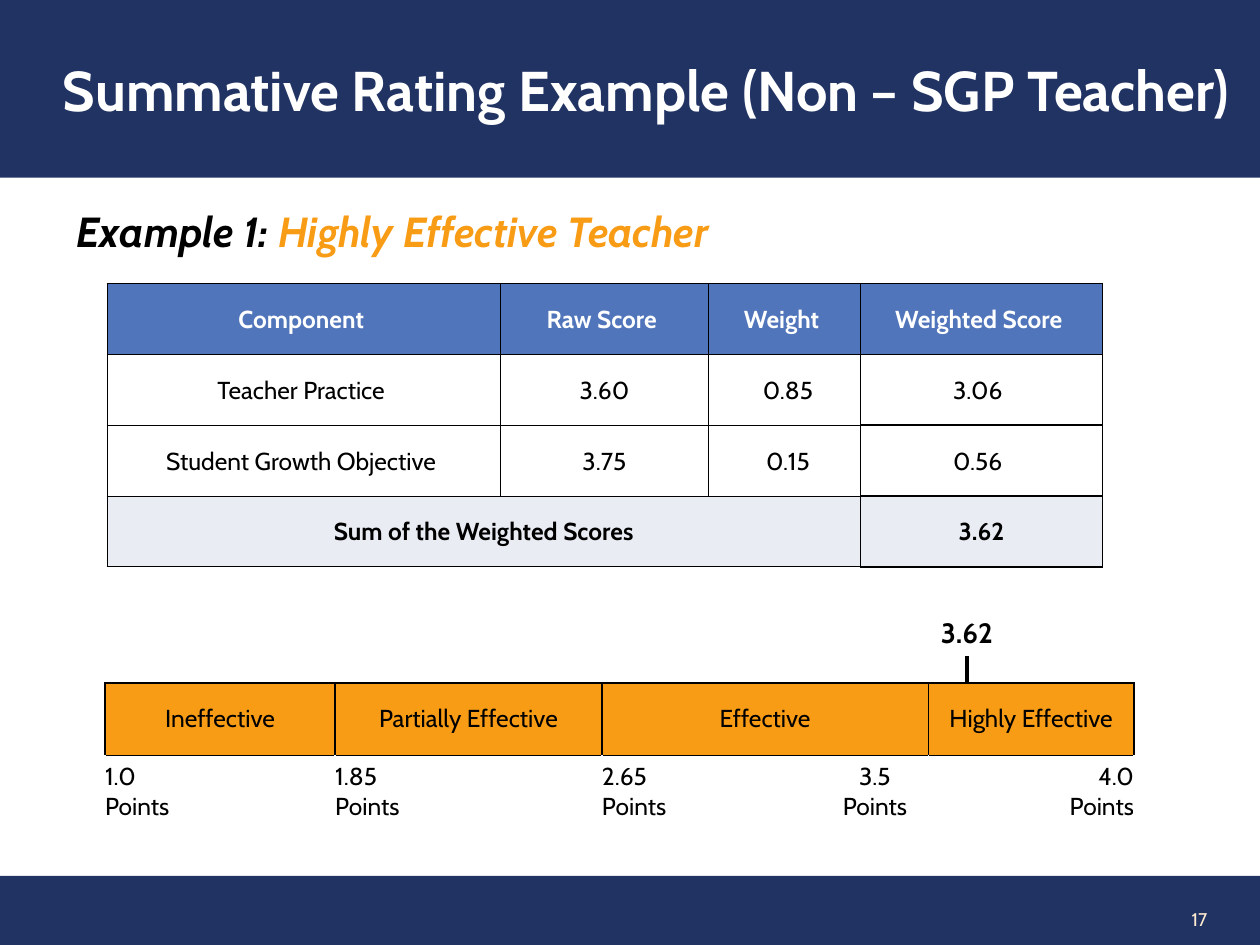
from lxml.etree import SubElement
from pptx import Presentation
from pptx.dml.color import RGBColor
from pptx.enum.shapes import MSO_CONNECTOR, MSO_SHAPE
from pptx.enum.text import MSO_ANCHOR, PP_ALIGN
from pptx.oxml.ns import qn
from pptx.util import Pt

FONT = "Cabin"
NAVY, BLUE, PALE = "213363", "5075BB", "E9ECF3"
ORANGE, CREAM, BLACK, WHITE = "F89C15", "FEEBD0", "000000", "FFFFFF"
LEFT, CENTER, RIGHT = PP_ALIGN.LEFT, PP_ALIGN.CENTER, PP_ALIGN.RIGHT


def rgb(color):
    return RGBColor.from_string(color)


def set_font(font, size, color, bold=False, italic=False):
    font.name, font.size = FONT, Pt(size)
    font.bold, font.italic = bold, italic
    font.color.rgb = rgb(color)


def set_margins(target, margins):
    (target.margin_left, target.margin_top,
     target.margin_right, target.margin_bottom) = map(Pt, margins)


def add_bar(slide, left, top, width, height):
    bar = slide.shapes.add_shape(
        MSO_SHAPE.RECTANGLE, Pt(left), Pt(top), Pt(width), Pt(height))
    bar.shadow.inherit = False
    bar.fill.solid()
    bar.fill.fore_color.rgb = rgb(NAVY)
    bar.line.fill.background()
    return bar


def add_text(slide, box, pieces, size, align=LEFT, wrap=True,
             anchor=MSO_ANCHOR.TOP, bold=False, italic=False):
    """Add one line of text made of (wording, color) pieces."""
    text_box = slide.shapes.add_textbox(*map(Pt, box))
    frame = text_box.text_frame
    frame.word_wrap, frame.vertical_anchor = wrap, anchor
    paragraph = frame.paragraphs[0]
    paragraph.alignment = align
    for wording, color in pieces:
        run = paragraph.add_run()
        run.text = wording
        set_font(run.font, size, color, bold, italic)
    return text_box


def set_borders(cell, left, right, top, bottom):
    """Each side is a (color, width) pair."""
    properties = cell._tc.get_or_add_tcPr()
    sides = {"L": left, "R": right, "T": top, "B": bottom}
    for side, (color, width) in sides.items():
        line = SubElement(properties, qn(f"a:ln{side}"), w=str(Pt(width)))
        fill = SubElement(line, qn("a:solidFill"))
        SubElement(fill, qn("a:srgbClr"), val=color)


def set_fill(cell, color=None, opacity=100):
    if color is None:
        cell.fill.background()
        return
    cell.fill.solid()
    cell.fill.fore_color.rgb = rgb(color)
    if opacity < 100:
        color_element = cell._tc.tcPr.find(".//" + qn("a:srgbClr"))
        SubElement(color_element, qn("a:alpha"), val=str(opacity * 1000))


def add_tab_stop(paragraph, position):
    tabs = SubElement(paragraph._p.get_or_add_pPr(), qn("a:tabLst"))
    SubElement(tabs, qn("a:tab"), pos=str(Pt(position)), algn="ctr")


def set_cell_text(cell, text, margins, align=CENTER, anchor=MSO_ANCHOR.MIDDLE,
                  color=BLACK, bold=False, tab=None):
    cell.text = text
    cell.vertical_anchor = anchor
    set_margins(cell, margins)
    for paragraph in cell.text_frame.paragraphs:
        paragraph.alignment = align
        if tab:
            add_tab_stop(paragraph, tab)
        set_font(paragraph.font, 14, color, bold)


def add_grid(slide, left, top, widths, heights):
    table = slide.shapes.add_table(
        len(heights), len(widths), Pt(left), Pt(top),
        Pt(sum(widths)), Pt(sum(heights))).table
    table.first_row = table.horz_banding = False
    for column, width in zip(table.columns, widths):
        column.width = Pt(width)
    for row, height in zip(table.rows, heights):
        row.height = Pt(height)
    return table


def add_score_table(slide):
    rows = [
        ("Component ", "Raw Score ", "Weight ", "Weighted Score "),
        ("Teacher Practice ", "3.60", "0.85", "3.06"),
        ("Student Growth Objective ", "3.75", "0.15", "0.56"),
        ("Sum of the Weighted Scores", "", "", "3.62"),
    ]
    fills = [BLUE, WHITE, WHITE, PALE]
    table = add_grid(slide, 61.2, 162, [225, 118.5, 87, 138.5], [40.5] * 4)
    table.cell(3, 0).merge(table.cell(3, 2))
    thin, thick = (BLACK, 0.5), (BLACK, 1)
    for row, texts in enumerate(rows):
        is_body = row in (1, 2)
        for column, text in enumerate(texts):
            cell = table.cell(row, column)
            edge = thick if column == 3 else thin
            set_borders(cell, thin, edge, edge, edge)
            set_fill(cell, None if is_body and column == 0 else fills[row])
            if cell.is_spanned:
                continue
            margins = (5 if is_body and column == 2 else 0.7, 0.7,
                       5 if is_body and column == 3 else 0.7, 0)
            set_cell_text(cell, text, margins, bold=not is_body,
                          color=WHITE if row == 0 else BLACK)


def add_rating_scale(slide):
    # Rating, fill opacity, points below, alignment of the points
    ratings = [
        ("Ineffective", 34, "1.0\nPoints", LEFT),
        ("Partially Effective", 56, "1.85\nPoints", LEFT),
        ("Effective", 75, "2.65\t3.5\nPoints\tPoints", LEFT),
        ("Highly Effective", 100, "4.0\nPoints", RIGHT),
    ]
    table = add_grid(slide, 60, 390.2, [131.5, 152.5, 186.5, 117.5], [41.5, 48])
    black, white = (BLACK, 1), (WHITE, 1)
    for column, (rating, opacity, points, align) in enumerate(ratings):
        band, label = table.cell(0, column), table.cell(1, column)
        set_borders(band, black, black, black, black)
        set_fill(band, ORANGE, opacity)
        set_cell_text(band, rating, (7.2, 3.6, 7.2, 3.6))
        set_borders(label, white, white, black, white)
        set_fill(label)
        set_cell_text(label, points, (0, 3.6, 0, 0), align, MSO_ANCHOR.TOP,
                      tab=156 if "\t" in points else None)


def add_score_marker(slide):
    score = add_text(slide, (517, 348, 71, 27), [("3.62", BLACK)], 16,
                     align=CENTER, bold=True)
    marker = slide.shapes.add_connector(
        MSO_CONNECTOR.STRAIGHT, Pt(552.5), Pt(375), Pt(552.5), Pt(389.5))
    marker.begin_connect(score, 2)
    marker.line.color.rgb = rgb(BLACK)
    marker.line.width = Pt(2)
    SubElement(marker._element.spPr, qn("a:effectLst"))


def add_title(slide, text):
    title = add_bar(slide, 0, 0, 720, 101.5)
    frame = title.text_frame
    frame.word_wrap, frame.vertical_anchor = True, MSO_ANCHOR.MIDDLE
    set_margins(frame, (36, 3.6, 7.2, 3.6))
    frame.text = text
    paragraph = frame.paragraphs[0]
    paragraph.alignment = LEFT
    set_font(paragraph.font, 32, WHITE, bold=True)


def main():
    presentation = Presentation()
    presentation.slide_width, presentation.slide_height = Pt(720), Pt(540)
    slide = presentation.slides.add_slide(presentation.slide_layouts[6])

    # Footer and title
    add_bar(slide, 0, 500.5, 721.5, 42.5)
    add_text(slide, (592, 510.5, 105, 29), [("17", CREAM)], 10.5,
             align=RIGHT, anchor=MSO_ANCHOR.MIDDLE)
    add_title(slide, "Summative Rating Example (Non – SGP Teacher)")

    # Rating scale with the teacher's score
    add_rating_scale(slide)
    add_score_marker(slide)

    # Example heading and scores
    add_text(slide, (36.7, 113.8, 384, 36),
             [("Example 1: ", BLACK), ("Highly Effective Teacher", ORANGE)],
             24, wrap=False, bold=True, italic=True)
    add_score_table(slide)

    presentation.save("out.pptx")


if __name__ == "__main__":
    main()
